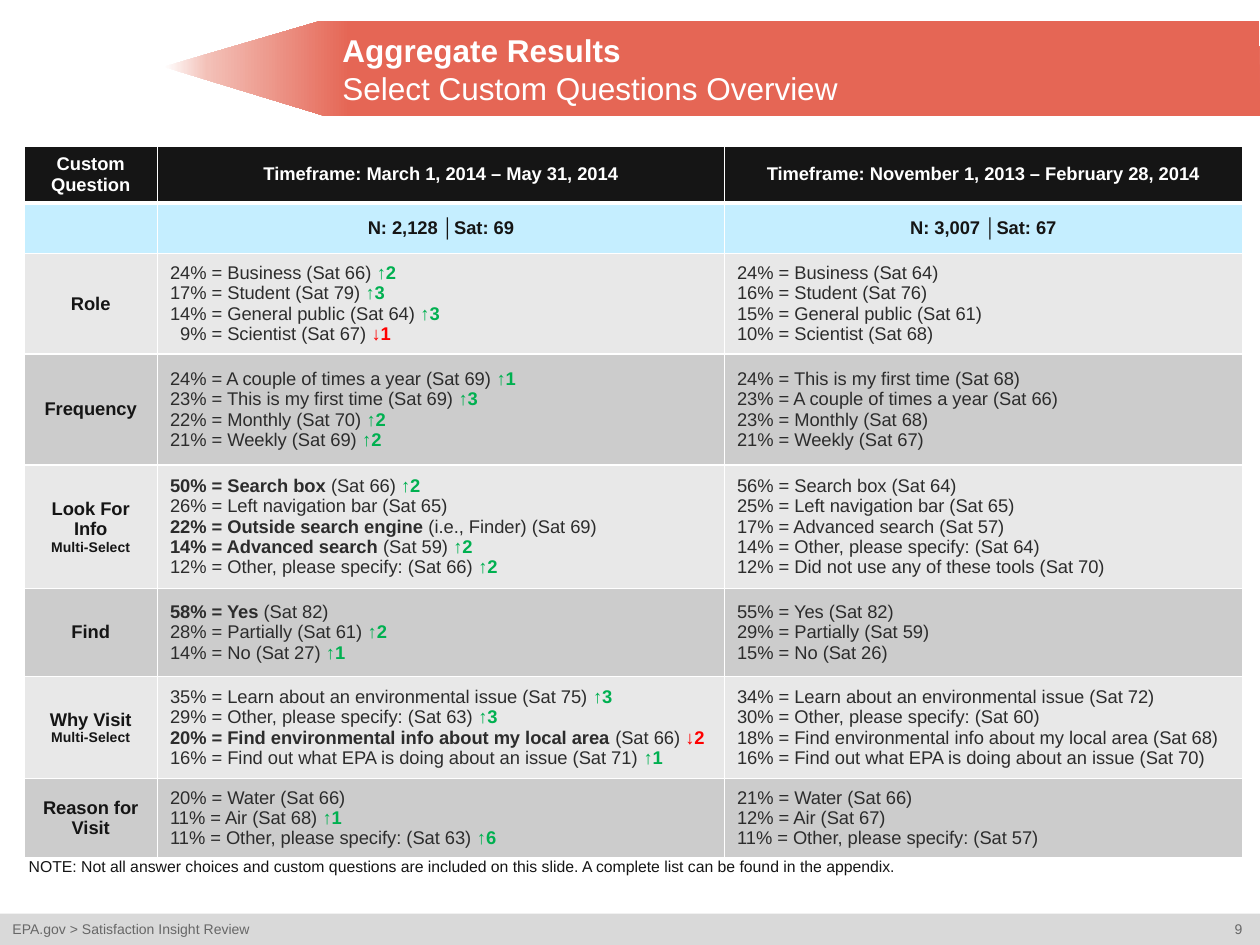
from copy import deepcopy
from dataclasses import dataclass

from lxml import etree
from pptx import Presentation, util as u
from pptx.dml.color import RGBColor
from pptx.enum import shapes, text
from pptx.oxml.ns import qn

CENTER, LEFT = text.PP_ALIGN.CENTER, text.PP_ALIGN.LEFT
MIDDLE = text.MSO_ANCHOR.MIDDLE


@dataclass(frozen=True)
class Theme:
    font: str = "Arial"
    white: str = "FFFFFF"
    ink: str = "151515"
    body: str = "2C2C2C"
    muted: str = "676767"
    up: str = "00B050"
    down: str = "FF0000"
    blush: str = "F3C0B7"
    coral: str = "E56655"
    footer: str = "D9D9D9"
    summary: str = "C5EEFF"
    bands: tuple = ("E8E8E8", "CCCCCC")
    title_size: float = 18
    table_size: float = 10.5
    note_size: float = 9
    small_size: float = 8


HEADER = ("Custom Question", "Timeframe: March 1, 2014 – May 31, 2014",
          "Timeframe: November 1, 2013 – February 28, 2014")
SUMMARY = ("", "N: 2,128 │Sat: 69", "N: 3,007 │Sat: 67")

# Row height, question, hint, current answers, previous answers; *...* is bold
QUESTIONS = [
    (0.8, "Role", "",
     ["24% = Business (Sat 66) ↑2", "17% = Student (Sat 79) ↑3",
      "14% = General public (Sat 64) ↑3", "9% = Scientist (Sat 67) ↓1"],
     ["24% = Business (Sat 64)", "16% = Student (Sat 76)",
      "15% = General public (Sat 61)", "10% = Scientist (Sat 68)"]),
    (0.88, "Frequency", "",
     ["24% = A couple of times a year (Sat 69) ↑1",
      "23% = This is my first time (Sat 69) ↑3",
      "22% = Monthly (Sat 70) ↑2", "21% = Weekly (Sat 69) ↑2"],
     ["24% = This is my first time (Sat 68)",
      "23% = A couple of times a year (Sat 66)",
      "23% = Monthly (Sat 68)", "21% = Weekly (Sat 67)"]),
    (0.98, "Look For Info", "Multi-Select",
     ["*50% = Search box* (Sat 66) ↑2", "26% = Left navigation bar (Sat 65)",
      "*22% = Outside search engine* (i.e., Finder) (Sat 69)",
      "*14% = Advanced search* (Sat 59) ↑2",
      "12% = Other, please specify: (Sat 66) ↑2"],
     ["56% = Search box (Sat 64)", "25% = Left navigation bar (Sat 65)",
      "17% = Advanced search (Sat 57)", "14% = Other, please specify: (Sat 64)",
      "12% = Did not use any of these tools (Sat 70)"]),
    (0.7, "Find", "",
     ["*58% = Yes* (Sat 82)", "28% = Partially (Sat 61) ↑2",
      "14% = No (Sat 27) ↑1"],
     ["55% = Yes (Sat 82)", "29% = Partially (Sat 59)", "15% = No (Sat 26)"]),
    (0.81, "Why Visit", "Multi-Select",
     ["35% = Learn about an environmental issue (Sat 75) ↑3",
      "29% = Other, please specify: (Sat 63) ↑3",
      "*20% = Find environmental info about my local area* (Sat 66) ↓2",
      "16% = Find out what EPA is doing about an issue (Sat 71) ↑1"],
     ["34% = Learn about an environmental issue (Sat 72)",
      "30% = Other, please specify: (Sat 60)",
      "18% = Find environmental info about my local area (Sat 68)",
      "16% = Find out what EPA is doing about an issue (Sat 70)"]),
    (0.61, "Reason for Visit", "",
     ["20% = Water (Sat 66)", "11% = Air (Sat 68) ↑1",
      "11% = Other, please specify: (Sat 63) ↑6"],
     ["21% = Water (Sat 66)", "12% = Air (Sat 67)",
      "11% = Other, please specify: (Sat 57)"]),
]


class SlideBuilder:
    def __init__(self, slide, theme):
        self.slide, self.theme = slide, theme

    def fill_text(self, frame, lines, align=LEFT):
        """Fill a frame; each line is a list of (words, size, color, bold)."""
        for index, line in enumerate(lines):
            paragraph = frame.paragraphs[0] if index == 0 else frame.add_paragraph()
            paragraph.alignment = align
            for words, size, color, bold in line:
                run = paragraph.add_run()
                run.text = words
                formats = {"name": self.theme.font, "size": u.Pt(size), "bold": bold}
                for name, value in formats.items():
                    setattr(run.font, name, value)
                run.font.color.rgb = RGBColor.from_string(color)

    def textbox(self, box, lines, align=LEFT, **formats):
        frame = self.slide.shapes.add_textbox(*map(u.Inches, box)).text_frame
        for name, value in {"word_wrap": True, **formats}.items():
            setattr(frame, name, value)
        self.fill_text(frame, lines, align)

    def bar(self, box, color):
        shape = self.slide.shapes.add_shape(
            shapes.MSO_SHAPE.RECTANGLE, *map(u.Inches, box))
        shape.shadow.inherit = False
        shape.fill.solid()
        shape.fill.fore_color.rgb = RGBColor.from_string(color)
        shape.line.fill.background()

    def banner(self, points, stops):
        """Draw a polygon with a left-to-right gradient of (position, color)."""
        start, *rest = [tuple(map(u.Inches, point)) for point in points]
        builder = self.slide.shapes.build_freeform(*start)
        builder.add_line_segments(rest, close=True)
        shape = builder.convert_to_shape()
        shape.shadow.inherit = False
        shape.line.fill.background()
        shape.fill.gradient()
        shape.fill.gradient_angle = 0
        stop_list = shape._element.spPr.find(".//" + qn("a:gsLst"))
        while len(stop_list) < len(stops):
            stop_list.append(deepcopy(stop_list[-1]))
        for stop, (position, color) in zip(shape.fill.gradient_stops, stops):
            stop.position = position
            stop.color.rgb = RGBColor.from_string(color)

    def table(self, box, widths, heights):
        table = self.slide.shapes.add_table(
            len(heights), len(widths), *map(u.Inches, box)).table
        table.horz_banding = False
        for column, width in zip(table.columns, widths):
            column.width = u.Inches(width)
        for row, height in zip(table.rows, heights):
            row.height = u.Inches(height)
        return table

    def cell(self, cell, lines, fill, align=CENTER, **borders):
        cell.vertical_anchor = MIDDLE
        for side in "LRTB":
            line = etree.SubElement(cell._tc.get_or_add_tcPr(), qn(f"a:ln{side}"),
                                    w=str(u.Pt(borders.get(side, 1))))
            paint = etree.SubElement(line, qn("a:solidFill"))
            etree.SubElement(paint, qn("a:srgbClr"), val=self.theme.white)
        cell.fill.solid()
        cell.fill.fore_color.rgb = RGBColor.from_string(fill)
        self.fill_text(cell.text_frame, lines, align)

    def answers(self, cell, answers, fill):
        self.cell(cell, [self.answer_runs(answer) for answer in answers], fill, LEFT)
        for paragraph, answer in zip(cell.text_frame.paragraphs, answers):
            if answer.index("%") == 1:  # line up one-digit shares
                paragraph._p.get_or_add_pPr().set("marL", str(u.Inches(0.08)))

    def answer_runs(self, answer):
        theme = self.theme
        trend_color = theme.up if "↑" in answer else theme.down
        start = max(answer.find("↑"), answer.find("↓"))
        words, trend = (answer[:start], answer[start:]) if start > 0 else (answer, "")
        runs = [(part, theme.table_size, theme.body, index % 2 == 1)
                for index, part in enumerate(words.split("*")) if part]
        if trend:
            runs.append((trend, theme.table_size, trend_color, True))
        return runs


def main():
    presentation = Presentation()
    presentation.slide_width, presentation.slide_height = u.Inches(10), u.Inches(7.5)
    theme = Theme()
    slide = SlideBuilder(
        presentation.slides.add_slide(presentation.slide_layouts[6]), theme)

    slide.banner([(1.3, 0.53), (2.53, 0.17), (9.99, 0.17), (10, 0.92), (2.58, 0.92)],
                 [(0, theme.white), (0.04, theme.blush), (0.17, theme.coral)])
    slide.bar((0, 7.25, 10, 0.25), theme.footer)
    slide.textbox((9.66, 7.26, 0.34, 0.24),
                  [[("9", theme.small_size, theme.muted, False)]], CENTER, word_wrap=False)
    slide.textbox((0, 7.26, 2.12, 0.24),
                  [[("EPA.gov > Satisfaction Insight Review",
                     theme.small_size, theme.muted, False)]], word_wrap=False)
    slide.textbox((2.62, 0.18, 7.07, 0.74),
                  [[("Aggregate Results", theme.title_size, theme.white, True)],
                   [("Select Custom Questions Overview",
                     theme.title_size, theme.white, False)]], vertical_anchor=MIDDLE)
    slide.textbox((0.13, 6.75, 8.17, 0.25),
                  [[("NOTE: Not all answer choices and custom questions are included on "
                     "this slide. A complete list can be found in the appendix.",
                     theme.note_size, theme.ink, False)]])

    heights = [0.44, 0.3] + [question[0] for question in QUESTIONS]
    table = slide.table((0.19, 1.16, 9.67, sum(heights)), (1.06, 4.5, 4.11), heights)
    for column, (heading, total) in enumerate(zip(HEADER, SUMMARY)):
        slide.cell(table.cell(0, column),
                   [[(heading, theme.table_size, theme.white, True)]], theme.ink, B=3)
        slide.cell(table.cell(1, column),
                   [[(total, theme.table_size, theme.ink, True)]], theme.summary, T=3)
    for index, (_, question, hint, current, previous) in enumerate(QUESTIONS):
        row, fill = index + 2, theme.bands[index % 2]
        labels = [[(question, theme.table_size, theme.ink, True)]]
        if hint:
            labels.append([(hint, theme.small_size, theme.ink, True)])
        slide.cell(table.cell(row, 0), labels, fill)
        slide.answers(table.cell(row, 1), current, fill)
        slide.answers(table.cell(row, 2), previous, fill)

    presentation.save("out.pptx")


if __name__ == "__main__":
    main()
